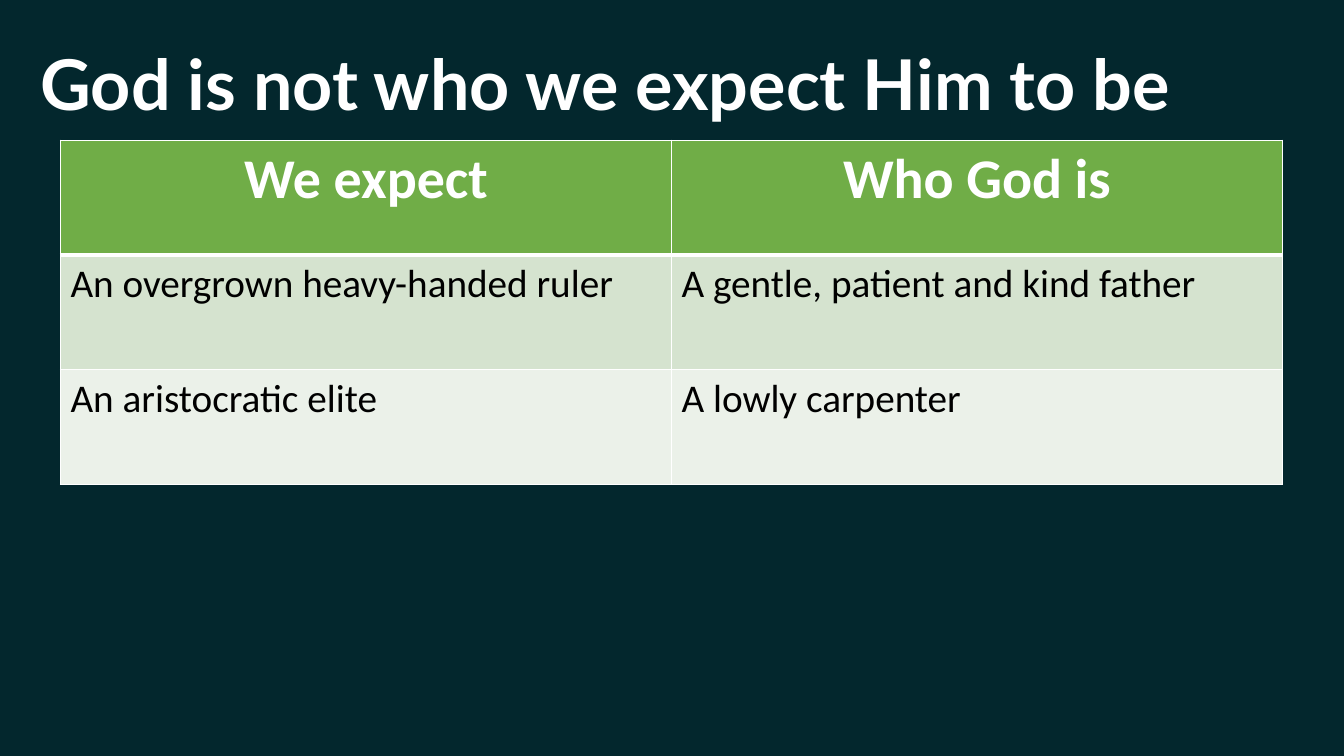
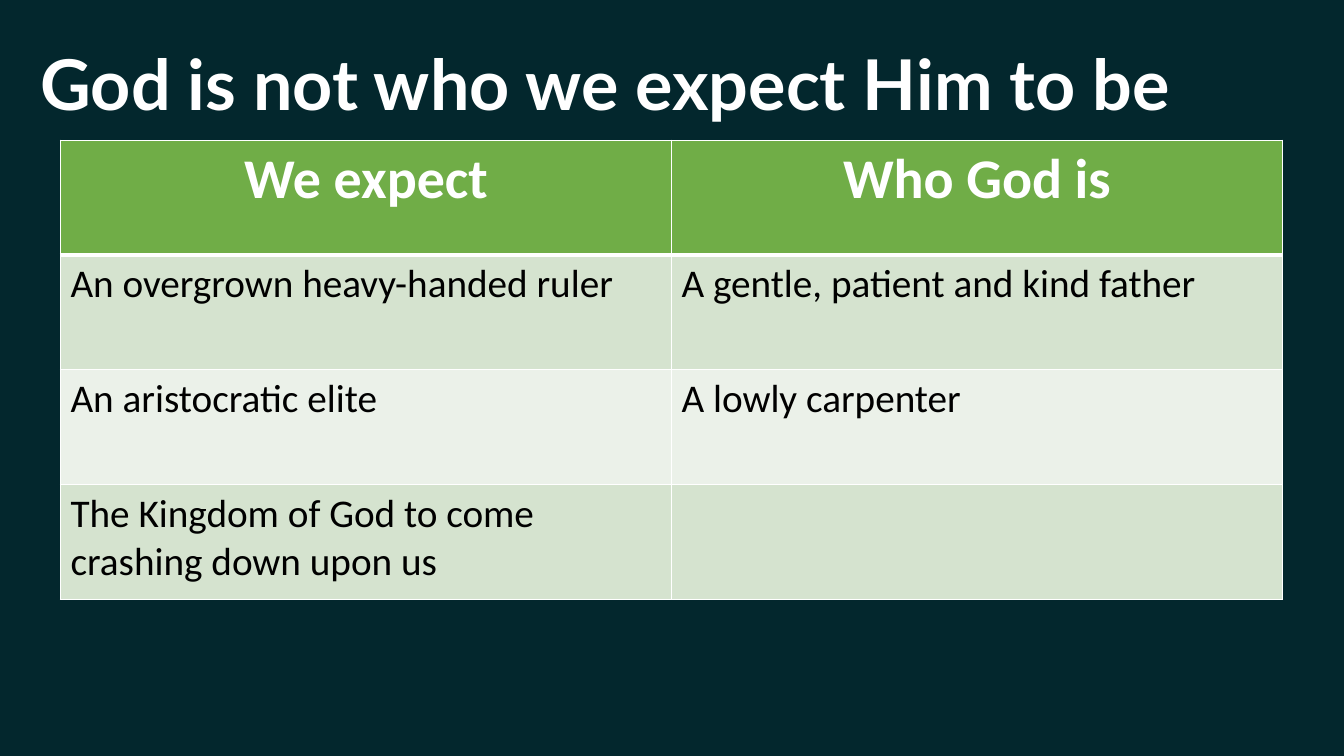
from dataclasses import dataclass

from lxml.etree import SubElement
from pptx import Presentation
from pptx.dml.color import RGBColor
from pptx.enum.text import MSO_ANCHOR, PP_ALIGN
from pptx.oxml.ns import qn
from pptx.presentation import Presentation as Deck
from pptx.slide import Slide
from pptx.table import _Cell
from pptx.text.text import _Paragraph
from pptx.util import Inches, Pt


@dataclass(frozen=True)
class Theme:
    background: str = "03272D"
    light: str = "FFFFFF"
    dark: str = "000000"
    header: str = "70AD47"
    bands: tuple[str, str] = ("D5E3CF", "EBF1E9")
    title_font: str = "Lato"
    table_font: str = "Calibri"
    title_size: int = 50
    header_size: int = 40
    body_size: int = 28
    border: int = 1
    header_rule: int = 3


@dataclass(frozen=True)
class Contrast:
    expected: str
    actual: str = ""


THEME = Theme()
TITLE = "God is not who we expect Him to be"
HEADINGS = Contrast("We expect", "Who God is")
CONTRASTS = (
    Contrast("An overgrown heavy-handed ruler", "A gentle, patient and kind father"),
    Contrast("An aristocratic elite", "A lowly carpenter"),
    Contrast("The Kingdom of God to come crashing down upon us"),
)
COLUMN_WIDTH = 6.06
ROW_HEIGHT = 1.14


def format_runs(p: _Paragraph, font: str, size: int, color: str, bold: bool) -> None:
    for r in p.runs:
        r.font.name = font
        r.font.size = Pt(size)
        r.font.bold = bold
        r.font.color.rgb = RGBColor.from_string(color)


def set_borders(cell: _Cell, top: int, bottom: int) -> None:
    """Draw the four cell borders, with widths in points."""
    tc_pr = cell._tc.get_or_add_tcPr()
    widths = {"L": THEME.border, "R": THEME.border, "T": top, "B": bottom}
    for side, width in widths.items():
        line = SubElement(tc_pr, qn(f"a:ln{side}"), w=str(Pt(width)))
        fill = SubElement(line, qn("a:solidFill"))
        SubElement(fill, qn("a:srgbClr"), val=THEME.light)


def style_cell(cell: _Cell, text: str, row: int) -> None:
    is_header = row == 0
    set_borders(
        cell,
        top=THEME.header_rule if row == 1 else THEME.border,
        bottom=THEME.header_rule if is_header else THEME.border,
    )
    cell.fill.solid()
    color = THEME.header if is_header else THEME.bands[(row - 1) % 2]
    cell.fill.fore_color.rgb = RGBColor.from_string(color)
    cell.text_frame.text = text
    p = cell.text_frame.paragraphs[0]
    if is_header:
        p.alignment = PP_ALIGN.CENTER
        format_runs(p, THEME.table_font, THEME.header_size, THEME.light, True)
    else:
        format_runs(p, THEME.table_font, THEME.body_size, THEME.dark, False)


def add_title(slide: Slide) -> None:
    sp = slide.shapes.title
    sp.left, sp.top = Inches(0.3), Inches(0.15)
    sp.width, sp.height = Inches(12.58), Inches(1.45)
    tf = sp.text_frame
    tf.text = TITLE
    tf.word_wrap = True
    tf.vertical_anchor = MSO_ANCHOR.MIDDLE
    p = tf.paragraphs[0]
    p.alignment = PP_ALIGN.LEFT
    p.line_spacing = 0.9
    format_runs(p, THEME.title_font, THEME.title_size, THEME.light, True)


def add_contrast_table(slide: Slide, contrasts: tuple[Contrast, ...]) -> None:
    rows = (HEADINGS, *contrasts)
    table = slide.shapes.add_table(
        len(rows), 2, Inches(0.6), Inches(1.39),
        Inches(2 * COLUMN_WIDTH), Inches(len(rows) * ROW_HEIGHT),
    ).table
    for column in table.columns:
        column.width = Inches(COLUMN_WIDTH)
    for i, contrast in enumerate(rows):
        table.rows[i].height = Inches(ROW_HEIGHT)
        for j, text in enumerate((contrast.expected, contrast.actual)):
            style_cell(table.cell(i, j), text, i)


def add_contrast_slide(prs: Deck, contrasts: tuple[Contrast, ...]) -> None:
    slide = prs.slides.add_slide(prs.slide_layouts.get_by_name("Title Only"))
    add_title(slide)
    add_contrast_table(slide, contrasts)


def main() -> None:
    prs = Presentation()
    prs.slide_width, prs.slide_height = Inches(13.33), Inches(7.5)
    fill = prs.slide_master.background.fill
    fill.solid()
    fill.fore_color.rgb = RGBColor.from_string(THEME.background)
    for shown in (2, 3):
        add_contrast_slide(prs, CONTRASTS[:shown])
    prs.save("out.pptx")


if __name__ == "__main__":
    main()
